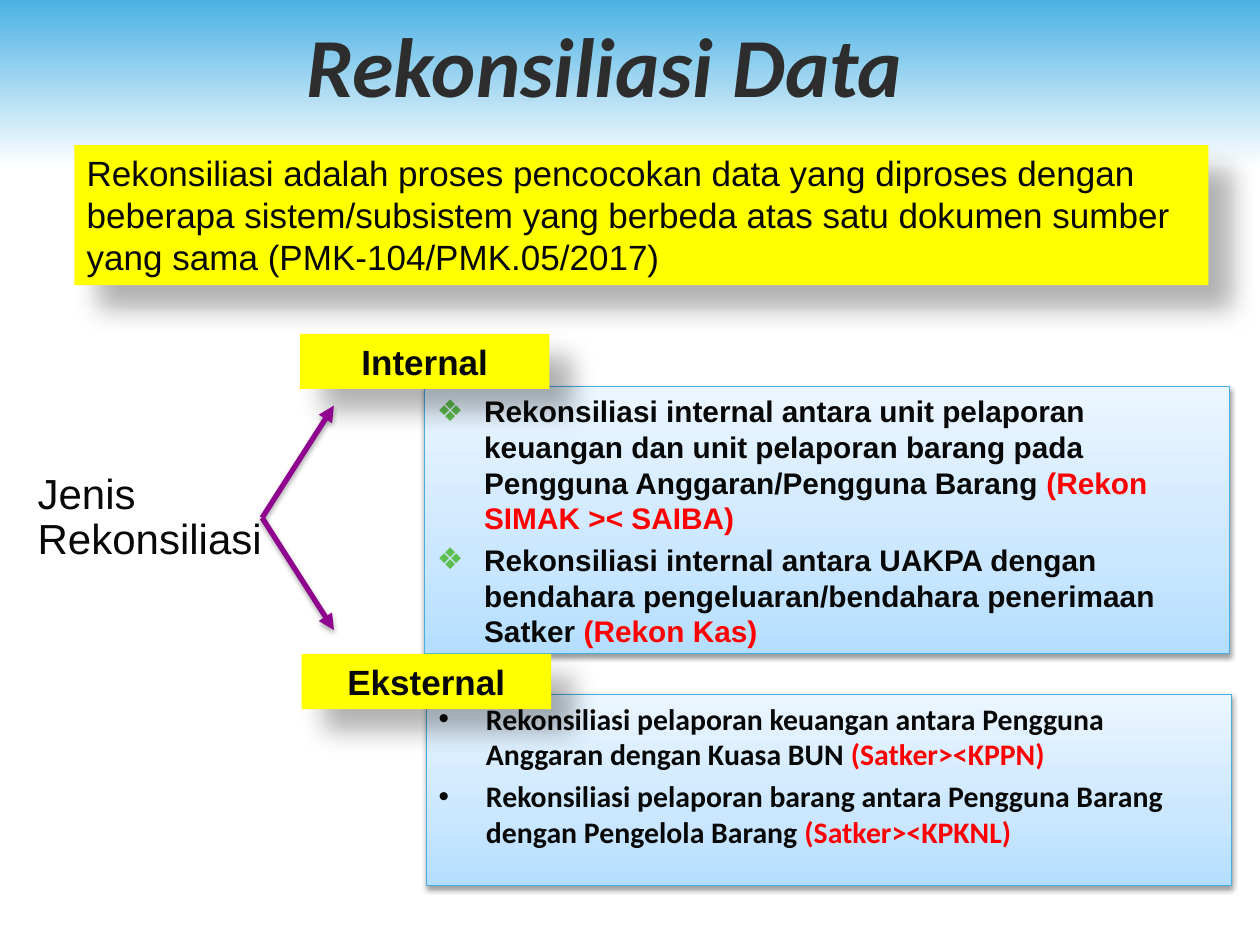
from lxml.etree import SubElement
from pptx import Presentation
from pptx.dml.color import RGBColor
from pptx.enum.shapes import MSO_CONNECTOR, MSO_SHAPE
from pptx.enum.text import MSO_ANCHOR, PP_ALIGN
from pptx.oxml.ns import qn
from pptx.util import Pt

RECTANGLE = MSO_SHAPE.RECTANGLE
STRAIGHT = MSO_CONNECTOR.STRAIGHT
TOP, MIDDLE = MSO_ANCHOR.TOP, MSO_ANCHOR.MIDDLE
LEFT, CENTER = PP_ALIGN.LEFT, PP_ALIGN.CENTER

BLACK = RGBColor(0, 0, 0)
WHITE = RGBColor(255, 255, 255)
INK = RGBColor(0x08, 0x08, 0x08)
CHARCOAL = RGBColor(0x2D, 0x2D, 0x2D)
RED = RGBColor(255, 0, 0)
YELLOW = RGBColor(255, 255, 0)
GREEN = RGBColor(0x5B, 0xBE, 0x4E)
PURPLE = RGBColor(0x8F, 0x03, 0x8F)
SKY = RGBColor(0x4A, 0xB1, 0xE4)
BORDER = RGBColor(0x45, 0xAE, 0xE3)

HEADER_STOPS = [(0, SKY), (100, WHITE)]
PANEL_STOPS = [
    (0, RGBColor(0xB4, 0xDE, 0xFF)),
    (35, RGBColor(0xCA, 0xE7, 0xFF)),
    (100, RGBColor(0xEB, 0xF6, 0xFF)),
]
LABEL_SHADOW = dict(opacity=30, blur=15, distance=18, angle=45)
PANEL_SHADOW = dict(opacity=38, blur=3.1, distance=1.6, angle=90)
ARROW_SHADOW = dict(opacity=35, blur=3.1, distance=1.8, angle=90)


def add_color(parent, color):
    return SubElement(parent, qn("a:srgbClr"), val=str(color))


def add_shadow(shape, opacity, blur, distance, angle):
    effects = SubElement(shape._element.spPr, qn("a:effectLst"))
    shadow = SubElement(
        effects, qn("a:outerShdw"), blurRad=str(Pt(blur)), dist=str(Pt(distance)),
        dir=str(angle * 60000), algn="tl", rotWithShape="0")
    SubElement(add_color(shadow, BLACK), qn("a:alpha"), val=str(opacity * 1000))


def fill_gradient(shape, stops, angle):
    shape.fill.gradient()
    shape.fill.gradient_angle = angle
    stop_list = shape._element.spPr.find(qn("a:gradFill")).find(qn("a:gsLst"))
    for stop in list(stop_list):
        stop_list.remove(stop)
    for position, color in stops:
        add_color(SubElement(stop_list, qn("a:gs"), pos=str(position * 1000)), color)


def add_rectangle(page, left, top, width, height, color=None, stops=None,
                  angle=90, border=None, shadow=None):
    box = page.shapes.add_shape(RECTANGLE, Pt(left), Pt(top), Pt(width), Pt(height))
    if stops:
        fill_gradient(box, stops, angle)
    else:
        box.fill.solid()
        box.fill.fore_color.rgb = color
    if border:
        box.line.color.rgb = border
        box.line.width = Pt(0.75)
    else:
        box.line.fill.background()
    if shadow:
        add_shadow(box, **shadow)
    else:
        box.shadow.inherit = False
    return box


def add_bullet(para, mark, color):
    properties = para._p.get_or_add_pPr()
    properties.set("marL", str(Pt(27)))
    properties.set("indent", str(Pt(-27)))
    add_color(SubElement(properties, qn("a:buClr")), color)
    SubElement(properties, qn("a:buFont"), typeface="Arial")
    SubElement(properties, qn("a:buChar"), char=mark)


def write_text(para, text, size=20, font="Arial", color=INK, bold=False,
               italic=False, align=LEFT):
    para.alignment = align
    span = para.add_run()
    span.text = text
    span.font.name = font
    span.font.size = Pt(size)
    span.font.bold = bold
    span.font.italic = italic
    span.font.color.rgb = color


def prepare_frame(box, anchor=TOP):
    frame = box.text_frame
    frame.word_wrap = True
    frame.vertical_anchor = anchor
    return frame


def add_text_box(page, left, top, width, height, text, spacing=None, **style):
    box = page.shapes.add_textbox(Pt(left), Pt(top), Pt(width), Pt(height))
    para = prepare_frame(box, MIDDLE).paragraphs[0]
    para.line_spacing = spacing
    write_text(para, text, **style)


def add_yellow_box(page, left, top, width, height, text, **style):
    box = add_rectangle(page, left, top, width, height, YELLOW, shadow=LABEL_SHADOW)
    write_text(prepare_frame(box).paragraphs[0], text, **style)


def add_panel(page, left, top, width, height, items, mark, mark_color, font):
    box = add_rectangle(page, left, top, width, height, stops=PANEL_STOPS,
                        border=BORDER, shadow=PANEL_SHADOW)
    frame = prepare_frame(box)
    for index, (statement, note) in enumerate(items):
        para = frame.add_paragraph() if index else frame.paragraphs[0]
        add_bullet(para, mark, mark_color)
        if index:
            para.space_before = Pt(3.4)
        write_text(para, statement + " ", size=17, font=font, bold=True)
        write_text(para, note, size=17, font=font, bold=True, color=RED)


def add_arrow(page, start, end):
    arrow = page.shapes.add_connector(STRAIGHT, *map(Pt, start + end))
    arrow.line.color.rgb = PURPLE
    arrow.line.width = Pt(3)
    SubElement(arrow.line._get_or_add_ln(), qn("a:tailEnd"), type="triangle")
    add_shadow(arrow, **ARROW_SHADOW)


def main():
    deck = Presentation()
    deck.slide_width, deck.slide_height = Pt(720), Pt(540)
    page = deck.slides.add_slide(deck.slide_layouts[6])

    add_rectangle(page, 0, 0, 720, 95.8, stops=HEADER_STOPS, angle=270)
    add_text_box(page, 42.5, 2.2, 606, 68.4, "Rekonsiliasi Data", size=48,
                 font="Calibri", color=CHARCOAL, bold=True, italic=True, align=CENTER)
    add_yellow_box(
        page, 42.5, 83, 648, 80,
        "Rekonsiliasi adalah proses pencocokan data yang diproses dengan beberapa "
        "sistem/subsistem yang berbeda atas satu dokumen sumber yang sama "
        "(PMK-104/PMK.05/2017)")

    internal_items = [
        ("Rekonsiliasi internal antara unit pelaporan keuangan dan unit pelaporan "
         "barang pada Pengguna Anggaran/Pengguna Barang", "(Rekon SIMAK >< SAIBA)"),
        ("Rekonsiliasi internal antara UAKPA dengan bendahara "
         "pengeluaran/bendahara penerimaan Satker", "(Rekon Kas)"),
    ]
    external_items = [
        ("Rekonsiliasi pelaporan keuangan antara Pengguna Anggaran dengan Kuasa BUN",
         "(Satker><KPPN)"),
        ("Rekonsiliasi pelaporan barang antara Pengguna Barang dengan Pengelola Barang",
         "(Satker><KPKNL)"),
    ]
    add_panel(page, 242.6, 221, 460, 152.6, internal_items, "❖", GREEN, "Arial")
    add_panel(page, 243.6, 396.7, 460, 109.4, external_items, "•", INK, "Calibri")

    add_text_box(page, 14.4, 244, 157, 104.4, "Jenis Rekonsiliasi", spacing=0.9, size=24)
    for left, top, label in [(171.4, 190.8, "Internal"), (172.3, 373.7, "Eksternal")]:
        add_yellow_box(page, left, top, 142.6, 31.5, label, bold=True, align=CENTER)

    for end_top in (231.8, 360):
        add_arrow(page, (149.8, 295.9), (190.8, end_top))

    deck.save("out.pptx")


if __name__ == "__main__":
    main()
